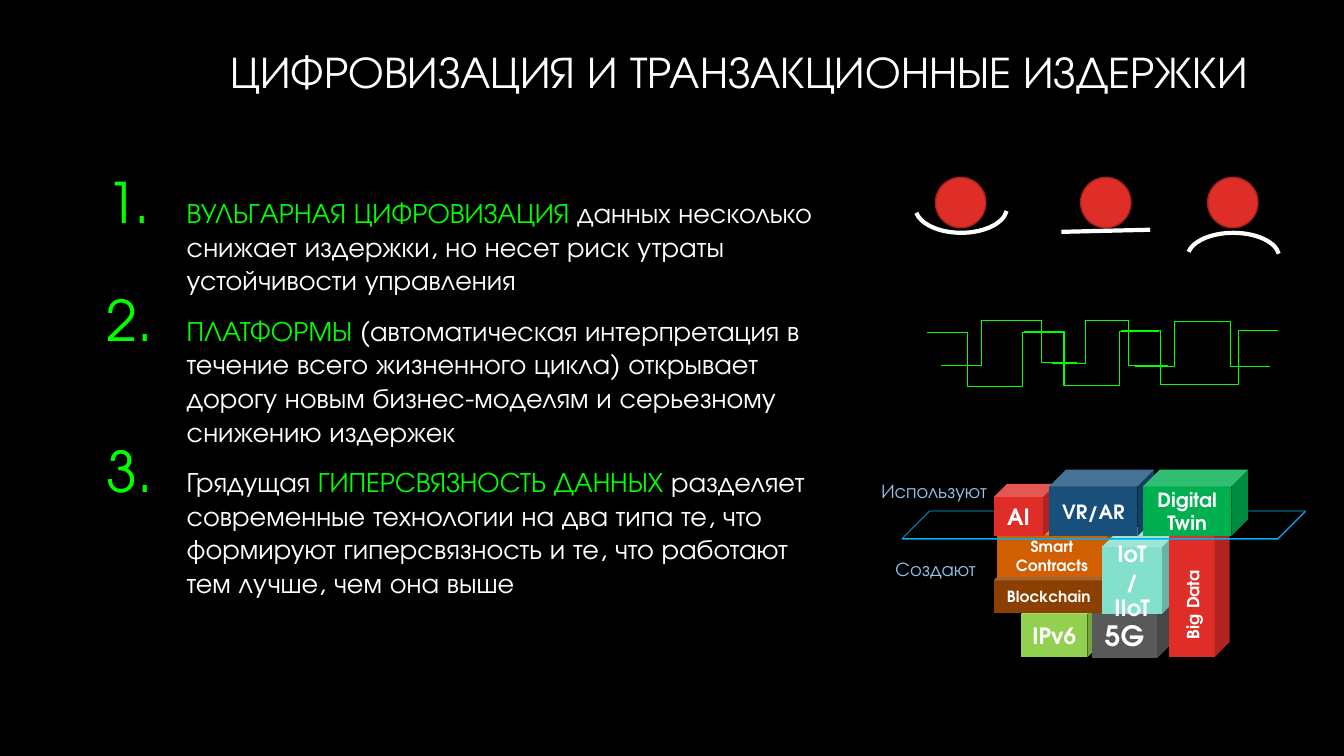
import lxml.etree
import pptx
import pptx.util
import pptx.dml.color
import pptx.enum.shapes
import pptx.enum.text
import pptx.oxml.ns

Pt = pptx.util.Pt
Kind = pptx.enum.shapes.MSO_SHAPE
Link = pptx.enum.shapes.MSO_CONNECTOR
Align = pptx.enum.text.PP_ALIGN
Anchor = pptx.enum.text.MSO_ANCHOR
Fit = pptx.enum.text.MSO_AUTO_SIZE
FONT = "TeX Gyre Adventor"
WHITE, GREEN, RED, SKY = "FFFFFF", "00FF00", "DF2E28", "92C3EA"


def color(value):
    return pptx.dml.color.RGBColor.from_string(value)


def node(parent, tag, **attrs):
    return lxml.etree.SubElement(parent, pptx.oxml.ns.qn(tag), **attrs)


def write(para, text, size, hue=WHITE, bold=False):
    run = para.add_run()
    run.text = text
    run.font.name = FONT
    run.font.size = Pt(size)
    run.font.bold = bold
    run.font.color.rgb = color(hue)


def place(shape, box):
    shape.left, shape.top, shape.width, shape.height = [Pt(v) for v in box]


def form(slide, kind, box, fill=None, line=None, width=1):
    shape = slide.shapes.add_shape(kind, *[Pt(v) for v in box])
    shape.shadow.inherit = False
    if fill:
        shape.fill.solid()
        shape.fill.fore_color.rgb = color(fill)
    else:
        shape.fill.background()
    if line:
        shape.line.color.rgb = color(line)
        shape.line.width = Pt(width)
    else:
        shape.line.fill.background()
    return shape


def link(slide, kind, ends, hue, width):
    item = slide.shapes.add_connector(kind, *[Pt(v) for v in ends])
    item.line.color.rgb = color(hue)
    item.line.width = Pt(width)
    node(item._element.spPr, "a:effectLst")


def label(slide, box, parts, align, bold=False, angle=0):
    item = slide.shapes.add_textbox(*[Pt(v) for v in box])
    item.rotation = angle
    item.text_frame.word_wrap = True
    para = item.text_frame.paragraphs[0]
    para.alignment = align
    for text, size, hue in parts:
        write(para, text, size, hue, bold)


def cube(slide, box, fill, text, size):
    item = form(slide, Kind.CUBE, box, fill)
    if text:
        frame = item.text_frame
        frame.word_wrap = True
        frame.vertical_anchor = Anchor.MIDDLE
        para = frame.paragraphs[0]
        para.alignment = Align.CENTER
        write(para, text, size, bold=True)


def head(slide, box):
    title = slide.shapes.title
    place(title, box)
    frame = title.text_frame
    frame.auto_size = Fit.NONE
    frame.vertical_anchor = Anchor.MIDDLE
    para = frame.paragraphs[0]
    para.alignment = Align.RIGHT
    para.line_spacing = 0.9
    write(para, "ЦИФРОВИЗАЦИЯ И ТРАНЗАКЦИОННЫЕ ИЗДЕРЖКИ ", 32)


def points(slide, box):
    items = [
        [("ВУЛЬГАРНАЯ ЦИФРОВИЗАЦИЯ", GREEN),
         (" данных несколько снижает издержки, но несет риск утраты устойчивости управления", WHITE)],
        [("ПЛАТФОРМЫ", GREEN),
         (" (автоматическая интерпретация в течение всего жизненного цикла) открывает дорогу "
          "новым бизнес-моделям и серьезному снижению издержек", WHITE)],
        [("Грядущая", WHITE), (" ГИПЕРСВЯЗНОСТЬ ДАННЫХ ", GREEN),
         ("разделяет современные технологии на два типа те, что формируют гиперсвязность и те, "
          "что работают тем лучше, чем она выше", WHITE)],
    ]
    body = slide.placeholders[1]
    place(body, box)
    frame = body.text_frame
    frame.auto_size = Fit.NONE
    frame.vertical_anchor = Anchor.TOP
    for num, parts in enumerate(items):
        para = frame.add_paragraph() if num else frame.paragraphs[0]
        props = para._p.get_or_add_pPr()
        props.set("marL", str(Pt(57)))
        props.set("indent", str(-Pt(57)))
        node(node(props, "a:buClr"), "a:srgbClr", val=GREEN)
        node(props, "a:buSzPct", val="200000")
        node(props, "a:buFont", typeface=FONT)
        node(props, "a:buAutoNum", type="arabicPeriod")
        para.alignment = Align.LEFT
        para.space_before = Pt(12 if num else 0)
        for text, hue in parts:
            write(para, text, 20, hue)


def balls(slide, box):
    x, y = box[:2]
    for dx in (14.4, 118.1, 208.8):
        form(slide, Kind.OVAL, (x + dx, y, 36, 36), RED, "A5221E")
    start, end, half = 2.55, 103.99, 108
    for dx, dy, high, turn in ((0, 3.6, 36, False), (194.4, 39.6, 34.6, True)):
        arc = form(slide, Kind.ARC, (x + dx, y + dy, 65.5, high), None, WHITE, 3)
        span = (2 * half - end, 2 * half - start) if turn else (start, end)
        arc.adjustments[0], arc.adjustments[1] = span
    link(slide, Link.STRAIGHT, (x + 104.4, y + 38.9, x + 167.8, y + 37.4), WHITE, 3)


def waves(slide, box):
    x, y = box[:2]
    low = [(0, 8.6), (39.6, 8.6), (69.1, 7.9), (108.7, 7.9), (138.2, 7.2), (193.7, 7.2)]
    steps = [(dx, dy, 57, 38.2, num % 2) for num, (dx, dy) in enumerate(low)]
    steps += [
        (10.1, 0, 57, 32.4, True), (56.9, 0, 49.7, 30.2, False),
        (89.3, 0, 47.5, 31, True), (115.2, 0, 57, 32.4, False),
        (148.3, 0.7, 57, 32.4, True), (187.9, 0.7, 57, 32.4, False),
    ]
    for dx, dy, wide, high, rise in steps:
        top, base = y + dy, y + dy + high
        first, last = (base, top) if rise else (top, base)
        link(slide, Link.ELBOW, (x + dx, first, x + dx + wide, last), GREEN, 0.75)


def stack(slide, box):
    x, y = box[:2]

    def at(dx, dy, wide, high):
        return x + dx, y + dy, wide, high

    under = [
        ((139.7, 92.9, 57.6, 41), "92D050", "IPv6", 16),
        ((190.1, 91.4, 57.6, 43.2), "595959", "5G", 20),
        ((120.2, 71.3, 86.4, 31), "8B3F01", "Blockchain", 11),
        ((122.4, 36.7, 88.6, 39.6), "D15E01", "Smart Contracts", 11),
        ((197.3, 41, 57.6, 61.9), "82E0CD", "IoT/ IIoT", 16),
        ((245.5, 33.8, 43.2, 100.1), RED, "", 12),
    ]
    over = [
        ((120.2, 10.1, 44.6, 37.4), RED, "AI", 16),
        ((159.8, 0, 74.9, 47.5), "184F7B", "VR/AR", 14),
        ((226.8, 0, 74.9, 47.5), "00B050", "Digital Twin", 14),
    ]
    for spot, *rest in under:
        cube(slide, at(*spot), *rest)
    label(slide, at(226.8, 84.2, 69.8, 24.5),
          [("Big", 12, WHITE), (" ", 14, WHITE), ("Data", 12, WHITE)], Align.CENTER, True, 270)
    label(slide, at(0, 59, 114.5, 19.4), [("Создают", 14, SKY)], Align.RIGHT)
    plane = form(slide, Kind.CUBE, at(54.7, 29.5, 288, 20.2), None, "00B0F0", 0.5)
    plane.adjustments[0] = 0.97
    label(slide, at(18, 2.9, 104.4, 24.5), [("Используют", 14, SKY)], Align.RIGHT)
    for spot, *rest in over:
        cube(slide, at(*spot), *rest)


def main():
    deck = pptx.Presentation()
    deck.slide_width, deck.slide_height = Pt(960), Pt(540)
    slide = deck.slides.add_slide(deck.slide_layouts[1])
    slide.background.fill.solid()
    slide.background.fill.fore_color.rgb = color("000000")
    head(slide, (37.4, 18.7, 870.5, 68.4))
    points(slide, (69.1, 136.1, 520.6, 358.6))
    stack(slide, (589.7, 335.5, 342.7, 134.6))
    balls(slide, (653.8, 126.7, 259.9, 74.2))
    waves(slide, (662.4, 229, 251, 46.8))
    deck.save("out.pptx")


if __name__ == "__main__":
    main()
